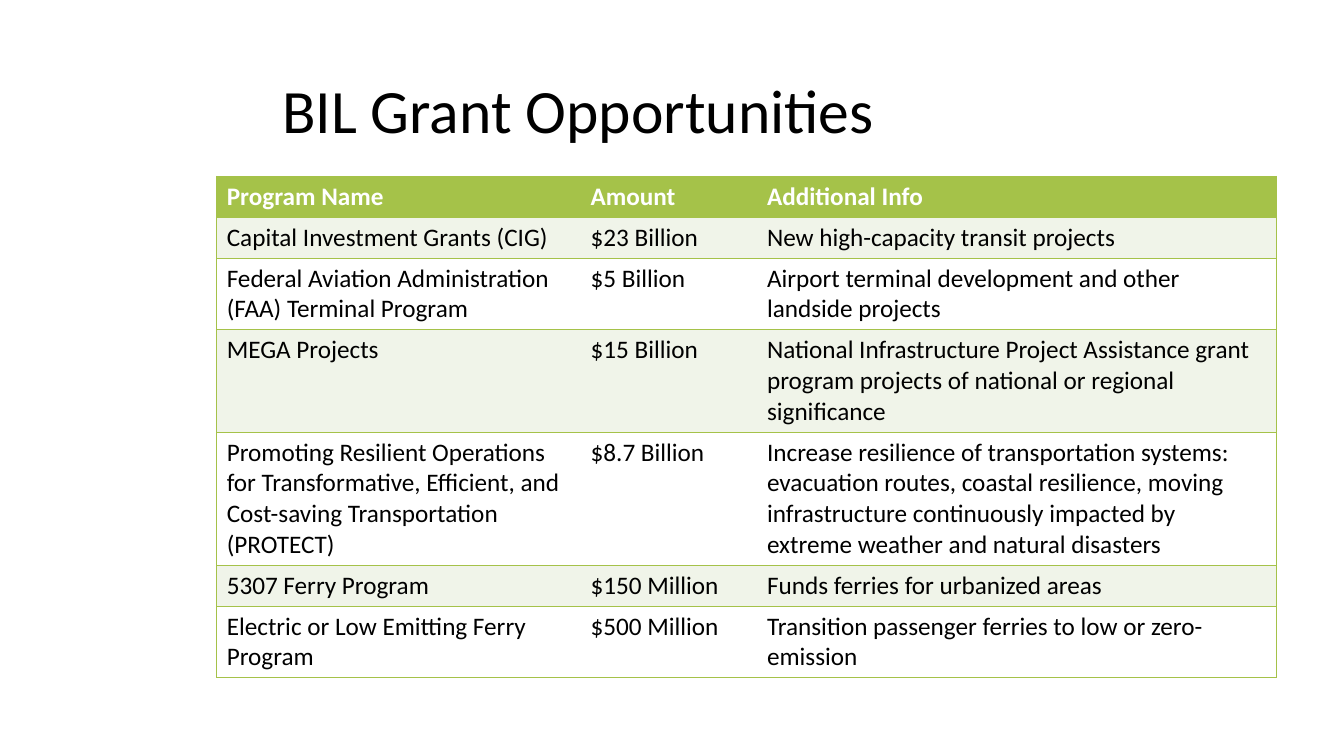
"""Build a slide with a table of infrastructure grant programs."""
from typing import NamedTuple

from lxml import etree
from pptx import Presentation
from pptx import util as u
from pptx.dml.color import RGBColor
from pptx.enum import text as t
from pptx.oxml import ns

GREEN = RGBColor(0xA5, 0xC2, 0x49)
PALE = RGBColor(0xF0, 0xF4, 0xE9)
WHITE = RGBColor(0xFF, 0xFF, 0xFF)
BLACK = RGBColor(0, 0, 0)
FONT = "Calibri"
PLAIN = "{2D5ABB26-0587-4C30-8999-92F81FD0307C}"
WIDTHS = (259.92, 126, 370.8)
ROW = 29.2
TALL = 354.24


class Grant(NamedTuple):
    name: str
    amount: str
    info: str


GRANTS = (
    Grant("Program Name", "Amount", "Additional Info"),
    Grant("Capital Investment Grants (CIG)", "$23 Billion",
          "New high-capacity transit projects"),
    Grant("Federal Aviation Administration (FAA) Terminal Program", "$5 Billion",
          "Airport terminal development and other landside projects"),
    Grant("MEGA Projects", "$15 Billion",
          "National Infrastructure Project Assistance grant program projects "
          "of national or regional significance"),
    Grant("Promoting Resilient Operations for Transformative, Efficient, and "
          "Cost-saving Transportation (PROTECT)", "$8.7 Billion",
          "Increase resilience of transportation systems: evacuation routes, "
          "coastal resilience, moving infrastructure continuously impacted by "
          "extreme weather and natural disasters"),
    Grant("5307 Ferry Program", "$150 Million",
          "Funds ferries for urbanized areas"),
    Grant("Electric or Low Emitting Ferry Program", "$500 Million",
          "Transition passenger ferries to low or zero-emission"),
)


def write(frame, words: str, size: float = 18, color: RGBColor = BLACK,
          bold: bool = False, gap: float = 1.0) -> None:
    frame.text = words
    para = frame.paragraphs[0]
    para.alignment = t.PP_ALIGN.LEFT
    para.line_spacing = gap
    font = para.runs[0].font
    font.name, font.size, font.bold = FONT, u.Pt(size), bold
    font.color.rgb = color


def edge(cell, sides: str) -> None:
    props = cell._tc.get_or_add_tcPr()
    for side in sides:
        line = etree.SubElement(props, ns.qn(f"a:ln{side}"), w=str(u.Pt(1)))
        fill = etree.SubElement(line, ns.qn("a:solidFill"))
        etree.SubElement(fill, ns.qn("a:srgbClr"), val=str(GREEN))


def paint(cell, color: RGBColor) -> None:
    cell.fill.solid()
    cell.fill.fore_color.rgb = color


def draw_title(slide) -> None:
    title = slide.shapes.title
    title.left, title.top = u.Pt(194.4), u.Pt(28.8)
    title.width, title.height = u.Pt(699.12), u.Pt(104.4)
    title.text_frame.vertical_anchor = t.MSO_ANCHOR.MIDDLE
    write(title.text_frame, "BIL Grant Opportunities", size=44, gap=0.9)


def draw_table(slide, grants: tuple[Grant, ...]) -> None:
    frame = slide.shapes.add_table(len(grants), len(WIDTHS), u.Pt(154.8),
                                   u.Pt(126), u.Pt(sum(WIDTHS)), u.Pt(TALL))
    table = frame.table
    table._tbl.tblPr.find(ns.qn("a:tableStyleId")).text = PLAIN
    for col, width in zip(table.columns, WIDTHS):
        col.width = u.Pt(width)
    for r, grant in enumerate(grants):
        table.rows[r].height = u.Pt(ROW)
        head = r == 0
        shade = GREEN if head else PALE if r % 2 else WHITE
        for c, (words, sides) in enumerate(zip(grant, ("LTB", "TB", "RTB"))):
            cell = table.cell(r, c)
            write(cell.text_frame, words, bold=head,
                  color=WHITE if head else BLACK)
            edge(cell, sides)
            paint(cell, shade)
    frame.height = u.Pt(TALL)


def main() -> None:
    deck = Presentation()
    deck.slide_width, deck.slide_height = u.Pt(960), u.Pt(540)
    slide = deck.slides.add_slide(deck.slide_layouts[5])
    draw_title(slide)
    draw_table(slide, GRANTS)
    deck.save("out.pptx")


if __name__ == "__main__":
    main()
